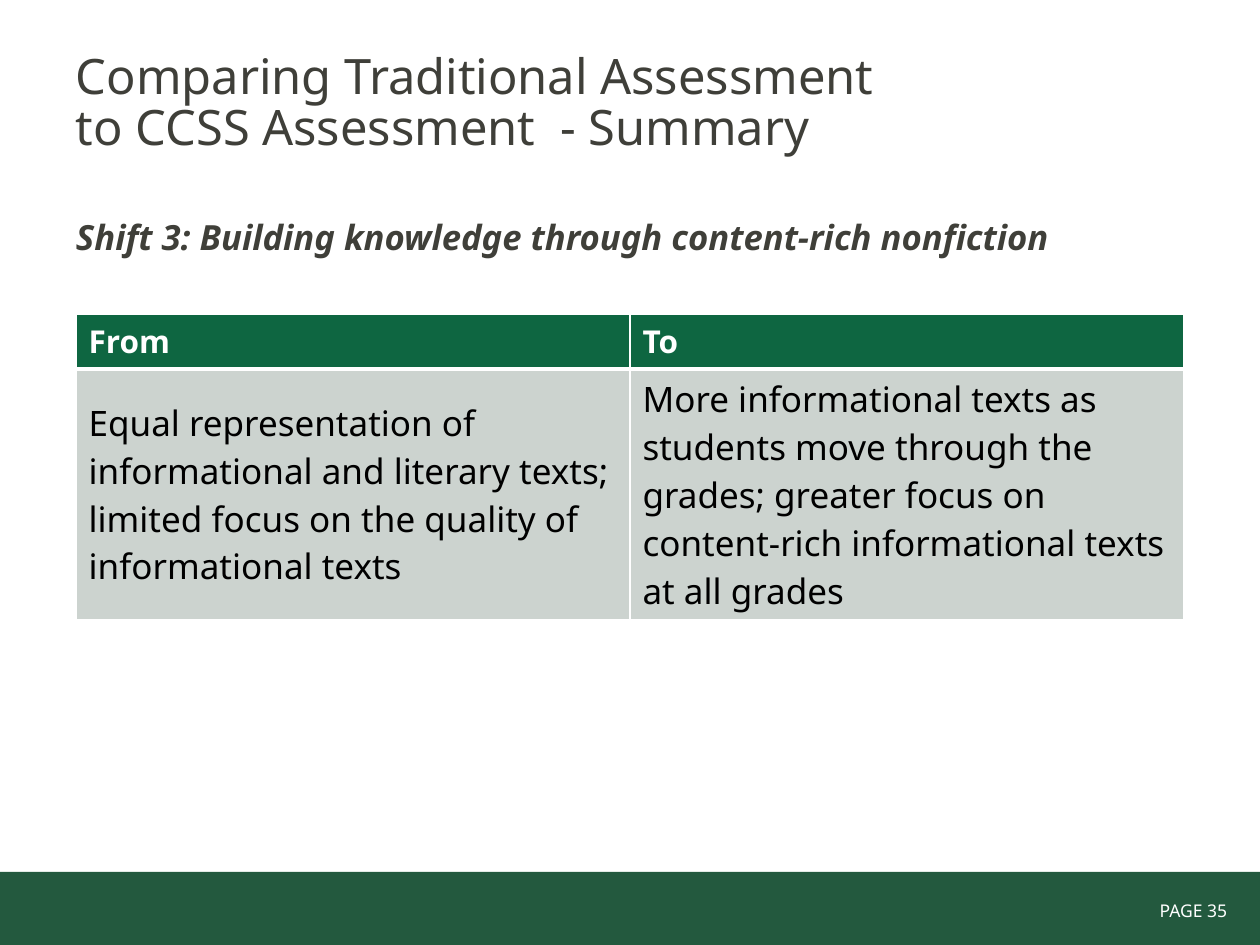
from lxml import etree
from pptx import Presentation
from pptx.dml.color import RGBColor
from pptx.enum.shapes import MSO_SHAPE
from pptx.enum.text import MSO_ANCHOR, PP_ALIGN
from pptx.oxml.ns import qn
from pptx.util import Emu, Pt

RECTANGLE = MSO_SHAPE.RECTANGLE
TOP, MIDDLE = MSO_ANCHOR.TOP, MSO_ANCHOR.MIDDLE
LEFT, RIGHT = PP_ALIGN.LEFT, PP_ALIGN.RIGHT

WHITE = RGBColor(0xFF, 0xFF, 0xFF)
BLACK = RGBColor(0x00, 0x00, 0x00)
CHARCOAL = RGBColor(0x3F, 0x3F, 0x39)
FOOTER_GREEN = RGBColor(0x23, 0x59, 0x3E)
HEADER_GREEN = RGBColor(0x0E, 0x66, 0x41)
BODY_GRAY = RGBColor(0xCC, 0xD3, 0xCF)

FONT = "Noto Sans"
PX_PER_INCH = 126
SLIDE_WIDTH, SLIDE_HEIGHT = 1260, 945
MARGIN = 76
COLUMN_WIDTH = 554
ROW_HEIGHTS = [55, 251]

TITLE = ["Comparing Traditional Assessment", "to CCSS Assessment  - Summary"]
SHIFT = "Shift 3: Building knowledge through content-rich nonfiction"
COMPARISON = [
    ["From", "To"],
    [
        "Equal representation of informational and literary texts; "
        "limited focus on the quality of informational texts",
        "More informational texts as students move through the grades; "
        "greater focus on content-rich informational texts at all grades",
    ],
]


def px(length):
    return Emu(round(length * 914400 / PX_PER_INCH))


def add_run(paragraph, text, size, color, bold=False, italic=False):
    run = paragraph.add_run()
    run.text = text
    run.font.name = FONT
    run.font.size = Pt(size)
    run.font.color.rgb = color
    run.font.bold = bold
    run.font.italic = italic


def add_text(slide, box, lines, size, color, align=LEFT, anchor=TOP,
             spacing=1.0, bold=False, italic=False):
    frame = slide.shapes.add_textbox(*map(px, box)).text_frame
    frame.word_wrap = True
    frame.vertical_anchor = anchor
    frame.margin_left = frame.margin_right = 0
    frame.margin_top = frame.margin_bottom = 0
    paragraph = frame.paragraphs[0]
    paragraph.alignment = align
    paragraph.line_spacing = spacing
    for index, line in enumerate(lines):
        if index:
            paragraph.add_line_break()
        add_run(paragraph, line, size, color, bold, italic)


def add_footer(slide):
    band = slide.shapes.add_shape(
        RECTANGLE, 0, px(872), px(SLIDE_WIDTH), px(SLIDE_HEIGHT - 872))
    band.shadow.inherit = False
    band.fill.solid()
    band.fill.fore_color.rgb = FOOTER_GREEN
    band.line.fill.background()
    add_text(slide, (1043, 893, 184, 34), ["PAGE 35"], 10, WHITE, RIGHT, MIDDLE)


def set_borders(cell, widths):
    properties = cell._tc.get_or_add_tcPr()
    for side, width in widths.items():
        border = etree.SubElement(properties, qn(f"a:ln{side}"), w=str(Pt(width)))
        fill = etree.SubElement(border, qn("a:solidFill"))
        etree.SubElement(fill, qn("a:srgbClr"), val=str(WHITE))


def add_comparison(slide):
    rows, columns = len(COMPARISON), len(COMPARISON[0])
    table = slide.shapes.add_table(
        rows, columns, px(MARGIN), px(314),
        px(COLUMN_WIDTH * columns), px(sum(ROW_HEIGHTS))).table
    for column in table.columns:
        column.width = px(COLUMN_WIDTH)
    for row, height in zip(table.rows, ROW_HEIGHTS):
        row.height = px(height)
    for r, texts in enumerate(COMPARISON):
        header = r == 0
        for c, text in enumerate(texts):
            cell = table.cell(r, c)
            set_borders(cell, {"L": 1, "R": 1, "T": 1 if header else 3,
                               "B": 3 if header else 1})
            cell.fill.solid()
            cell.fill.fore_color.rgb = HEADER_GREEN if header else BODY_GRAY
            cell.vertical_anchor = TOP if header else MIDDLE
            add_run(cell.text_frame.paragraphs[0], text, 18 if header else 20,
                    WHITE if header else BLACK, bold=header)


def main():
    deck = Presentation()
    deck.slide_width, deck.slide_height = px(SLIDE_WIDTH), px(SLIDE_HEIGHT)
    slide = deck.slides.add_slide(deck.slide_layouts[6])
    add_footer(slide)
    add_text(slide, (MARGIN, 54, 1108, 118), TITLE, 27.9, CHARCOAL, spacing=0.87)
    add_text(slide, (MARGIN, 216, 1108, 48), [SHIFT], 19.8, CHARCOAL,
             bold=True, italic=True)
    add_comparison(slide)
    deck.save("out.pptx")


if __name__ == "__main__":
    main()
